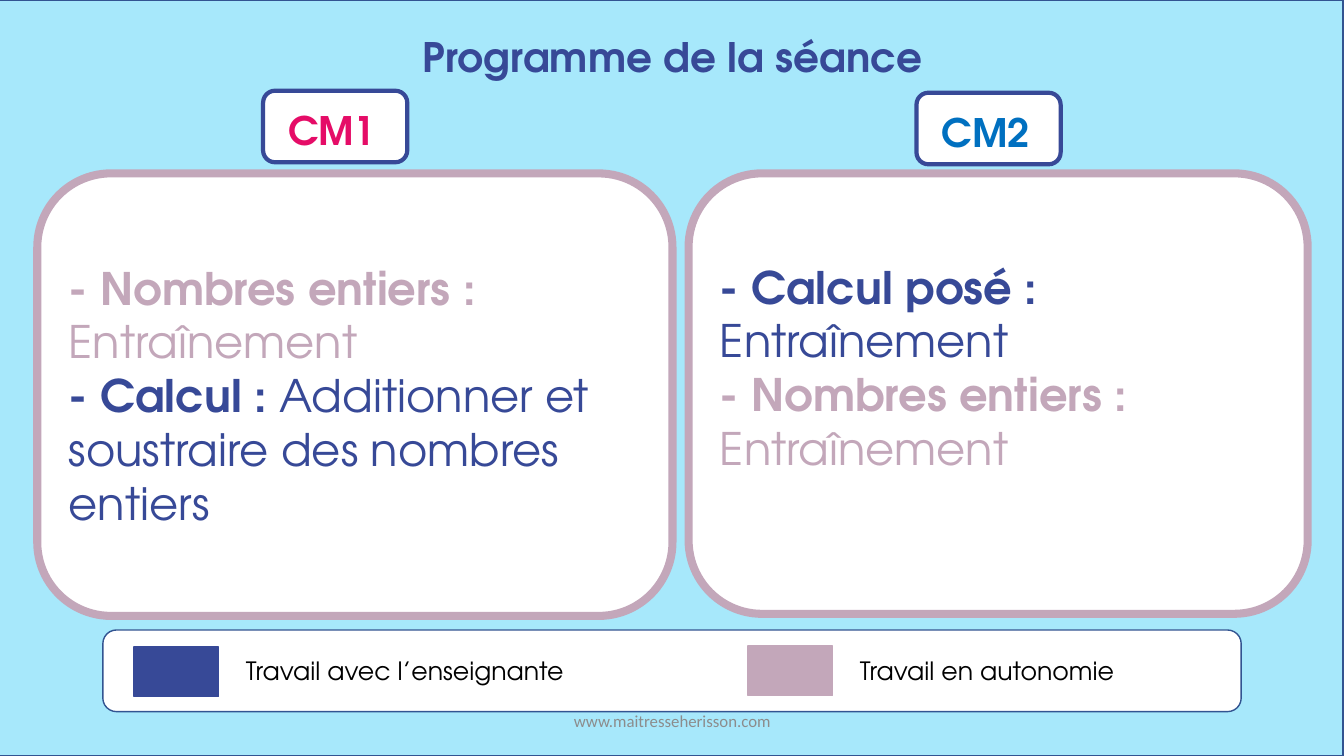
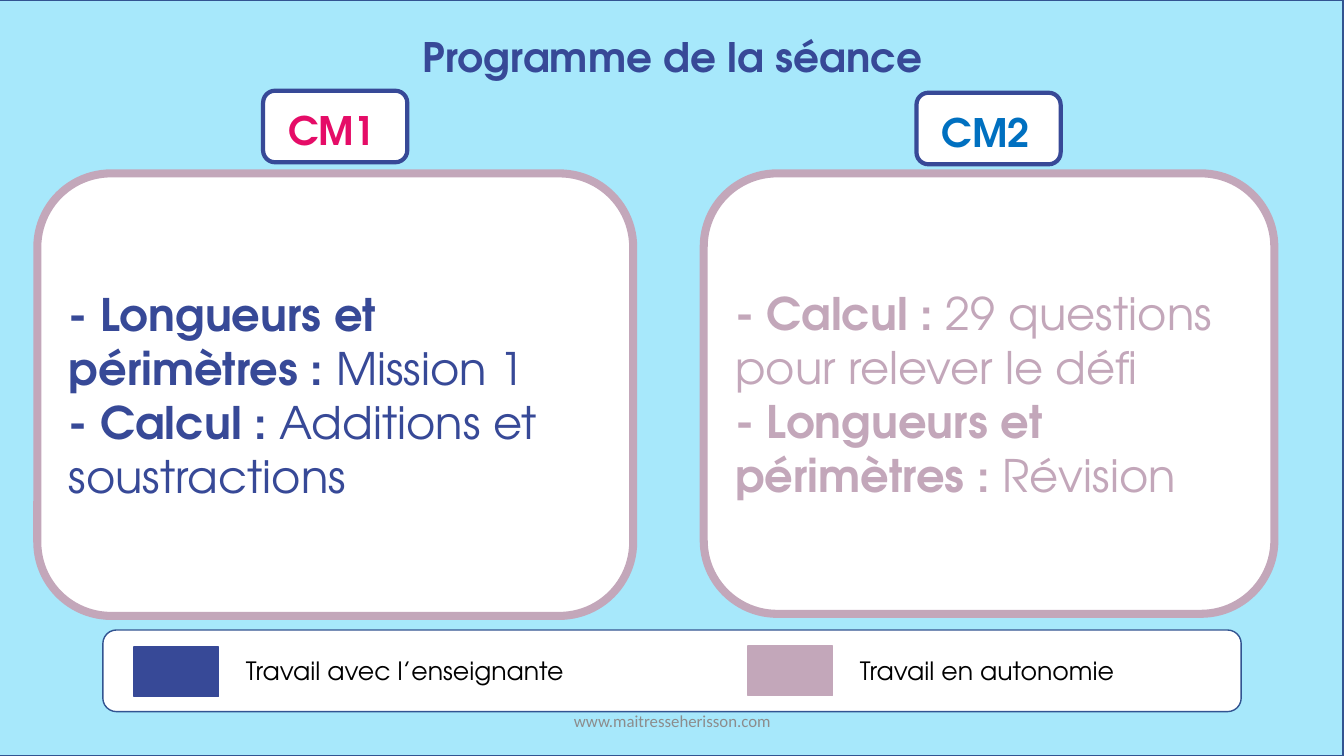
from pptx import Presentation
from pptx.dml.color import RGBColor
from pptx.enum.shapes import MSO_SHAPE as SHAPE
from pptx.enum.text import MSO_ANCHOR as ANCHOR, MSO_AUTO_SIZE as FIT, PP_ALIGN as ALIGN
from pptx.util import Inches, Pt

COLORS = {
    "sky": "A7E8FB", "edge": "325491", "white": "FFFFFF", "black": "000000",
    "teacher": "374997", "alone": "C3A7BA",
    "cm1": "E50C67", "cm2": "0070C0", "footer": "8C8C8C",
}
FONT = "TeX Gyre Adventor"
TITLE_ONLY = 5
WIDTH, HEIGHT = 13.33, 7.5
CARD_LINE = 0.53  # height of one line of card text


def color(name):
    return RGBColor.from_string(COLORS[name])


class Lesson:
    def __init__(self):
        self.deck = Presentation()
        self.deck.slide_width = Inches(WIDTH)
        self.deck.slide_height = Inches(HEIGHT)
        self.page = None

    def new_page(self):
        self.page = self.deck.slides.add_slide(self.deck.slide_layouts[TITLE_ONLY])
        backdrop = self.panel(self.page, (-0.01, 0, WIDTH, HEIGHT), "sky", "edge", 1, SHAPE.RECTANGLE)
        # The backdrop goes behind the title placeholder.
        self.page.shapes._spTree.insert(2, backdrop._element)

    def panel(self, parent, place, fill, line, weight, kind=SHAPE.ROUNDED_RECTANGLE):
        shape = parent.shapes.add_shape(kind, *map(Inches, place))
        shape.shadow.inherit = False
        shape.fill.solid()
        shape.fill.fore_color.rgb = color(fill)
        shape.line.color.rgb = color(line)
        shape.line.width = Pt(weight)
        return shape

    def span(self, para, text, size, tint, bold=False, font=FONT):
        run = para.add_run()
        run.text = text
        run.font.name = font
        run.font.size = Pt(size)
        run.font.bold = bold
        run.font.color.rgb = color(tint)

    def label(self, parent, place, text, size, tint, bold=False):
        box = parent.shapes.add_textbox(*map(Inches, place))
        box.text_frame.word_wrap = True
        self.span(box.text_frame.paragraphs[0], text, size, tint, bold)

    def title(self, text):
        title = self.page.shapes.title
        title.left, title.top, title.width, title.height = map(Inches, (0.01, 0.27, WIDTH, 0.59))
        frame = title.text_frame
        frame.auto_size = FIT.NONE
        frame.vertical_anchor = ANCHOR.TOP
        para = frame.paragraphs[0]
        para.alignment = ALIGN.CENTER
        self.span(para, text, 29, "teacher", True)

    def badge(self, left, top, text, tint):
        group = self.page.shapes.add_group_shape()
        self.panel(group, (left, top, 1.43, 0.71), "white", "teacher", 3)
        self.label(group, (left + 0.15, top + 0.11, 1.1, 0.57), text, 28, tint, True)

    def card(self, place, tasks, lines_below=0):
        """Draw a class's task list, raised by keeping room for lines_below."""
        frame = self.panel(self.page, place, "white", "alone", 5.75).text_frame
        frame.word_wrap = True
        frame.vertical_anchor = ANCHOR.MIDDLE
        frame.margin_bottom = Inches(0.05 + lines_below * CARD_LINE)
        for index, (subject, work, tint) in enumerate(tasks):
            para = frame.add_paragraph() if index else frame.paragraphs[0]
            para.alignment = ALIGN.LEFT
            self.span(para, f"- {subject} : ", 32, tint, True)
            self.span(para, work, 32, tint)

    def legend(self):
        group = self.page.shapes.add_group_shape()
        self.panel(group, (1.02, 6.25, 11.29, 0.81), "white", "edge", 1)
        for left, top, tint, text in (
            (1.33, 6.42, "teacher", "Travail avec l’enseignante"),
            (7.42, 6.41, "alone", "Travail en autonomie"),
        ):
            self.panel(group, (left, top, 0.84, 0.49), tint, tint, 1, SHAPE.RECTANGLE)
            self.label(group, (left + 1.01, 6.45, 3.42, 0.4), text, 18, "black")

    def footer(self, text):
        box = self.page.shapes.add_textbox(*map(Inches, (4.42, 6.95, 4.5, 0.4)))
        frame = box.text_frame
        frame.word_wrap = True
        frame.vertical_anchor = ANCHOR.MIDDLE
        para = frame.paragraphs[0]
        para.alignment = ALIGN.CENTER
        self.span(para, text, 12, "footer", font="Calibri")

    def programme(self, cm1, cm2):
        self.new_page()
        self.title("Programme de la séance")
        self.badge(2.61, 0.9, "CM1", "cm1")
        self.badge(9.09, 0.92, "CM2", "cm2")
        self.card(**cm1)
        self.card(**cm2)
        self.legend()
        self.footer("www.maitresseherisson.com")


SESSIONS = [
    (
        {"place": (0.37, 1.72, 6.3, 4.39), "tasks": [
            ("Nombres entiers", "Entraînement", "alone"),
            ("Calcul", "Additionner et soustraire des nombres entiers", "teacher"),
        ]},
        {"place": (6.83, 1.72, 6.14, 4.37), "lines_below": 1, "tasks": [
            ("Calcul posé", "Entraînement", "teacher"),
            ("Nombres entiers", "Entraînement", "alone"),
        ]},
    ),
    (
        {"place": (0.37, 1.72, 5.91, 4.39), "tasks": [
            ("Longueurs et périmètres", "Mission 1", "teacher"),
            ("Calcul", "Additions et soustractions", "teacher"),
        ]},
        {"place": (6.98, 1.72, 5.66, 4.37), "tasks": [
            ("Calcul", "29 questions pour relever le défi", "alone"),
            ("Longueurs et périmètres", "Révision", "alone"),
        ]},
    ),
]


def main():
    lesson = Lesson()
    for cm1, cm2 in SESSIONS:
        lesson.programme(cm1, cm2)
    lesson.deck.save("out.pptx")


if __name__ == "__main__":
    main()
